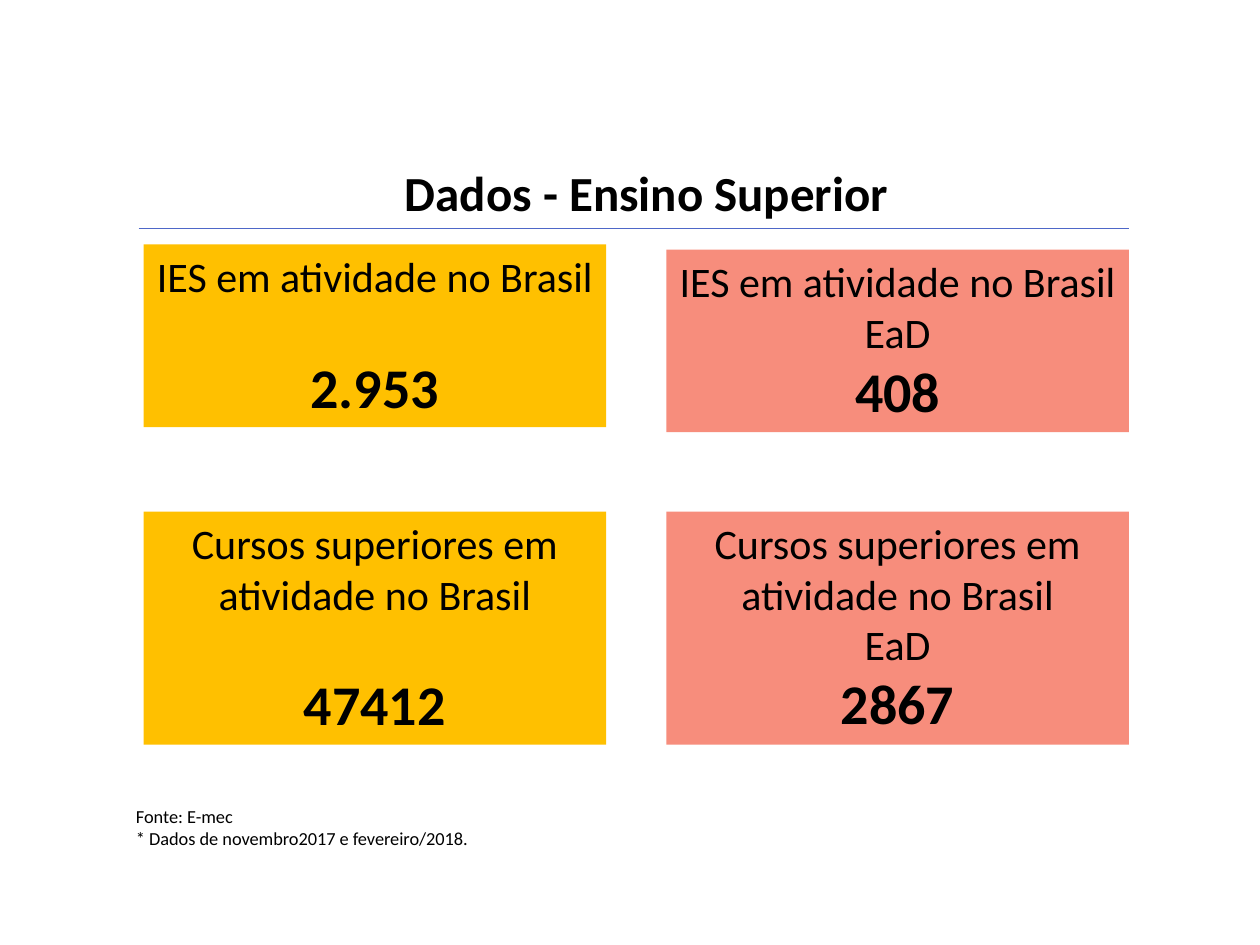
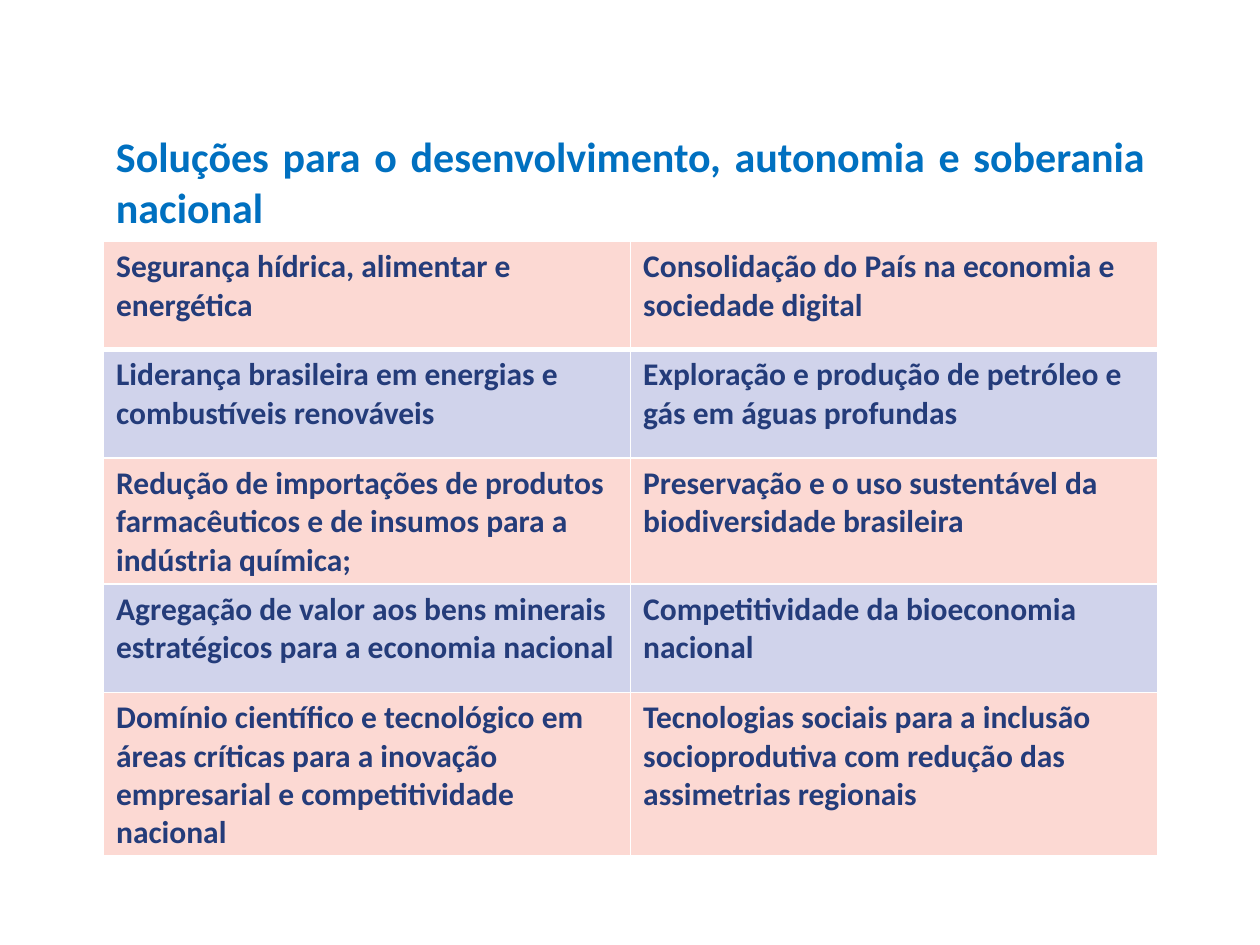
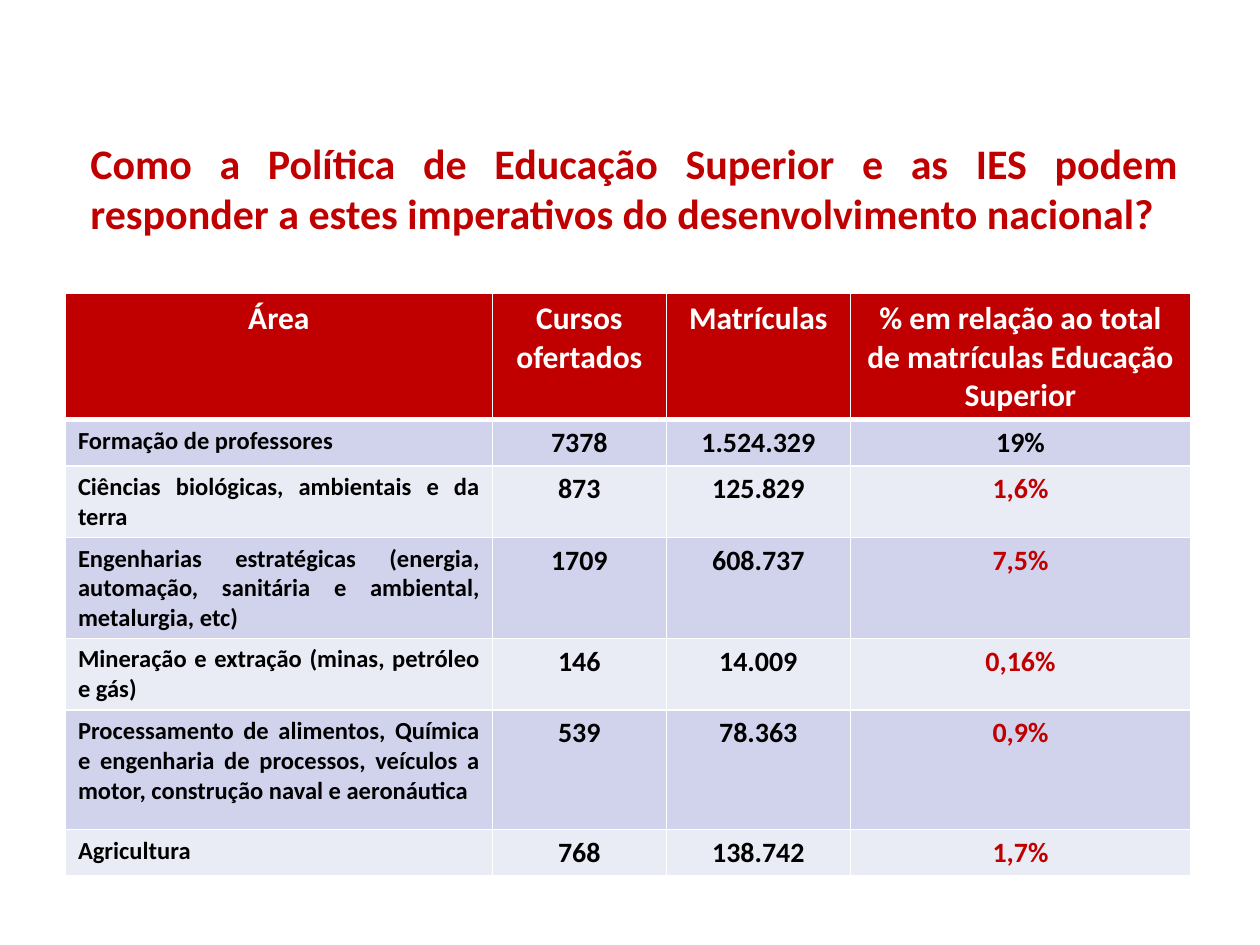
from dataclasses import dataclass

from lxml.etree import SubElement
from pptx import Presentation
from pptx.dml.color import RGBColor
from pptx.enum.shapes import MSO_CONNECTOR as Connector, MSO_SHAPE as ShapeKind
from pptx.enum.text import MSO_ANCHOR as Anchor, PP_ALIGN as Align
from pptx.oxml.ns import qn
from pptx.util import Pt

FONT = "Calibri"
BLACK, WHITE = "000000", "FFFFFF"
GOLD, SALMON = "FFC000", "F78D7C"
BLUE, NAVY, RULE_BLUE = "0070C0", "243C7A", "4E67C8"
RED = "C00000"
PINK, LILAC, PALE = "FCD9D3", "D0D3EB", "E9EBF5"

CARDS = [
    [("IES em atividade no Brasil", "2.953"),
     ("IES em atividade no Brasil EaD", "408")],
    [("Cursos superiores em atividade no Brasil", "47412"),
     ("Cursos superiores em atividade no Brasil\nEaD", "2867")],
]

SOLUTIONS = [
    ("Segurança hídrica, alimentar e energética",
     "Consolidação do País na economia e sociedade digital"),
    ("Liderança brasileira em energias e combustíveis renováveis",
     "Exploração e produção de petróleo e gás em águas profundas"),
    ("Redução de importações de produtos farmacêuticos e de insumos para a indústria química;",
     "Preservação e o uso sustentável da biodiversidade brasileira"),
    ("Agregação de valor aos bens minerais estratégicos para a economia nacional",
     "Competitividade da bioeconomia nacional"),
    ("Domínio científico e tecnológico em áreas críticas para a inovação empresarial e competitividade nacional",
     "Tecnologias sociais para a inclusão socioprodutiva com redução das assimetrias regionais"),
]

AREAS = [
    ("Área", "Cursos ofertados", "Matrículas",
     "% em relação ao total de matrículas Educação Superior"),
    ("Formação de professores", "7378", "1.524.329", "19%"),
    ("Ciências biológicas, ambientais e da terra", "873", "125.829", "1,6%"),
    ("Engenharias estratégicas (energia, automação, sanitária e ambiental, metalurgia, etc)",
     "1709", "608.737", "7,5%"),
    ("Mineração e extração (minas, petróleo e gás)", "146", "14.009", "0,16%"),
    ("Processamento de alimentos, Química e engenharia de processos, veículos a motor, "
     "construção naval e aeronáutica", "539", "78.363", "0,9%"),
    ("Agricultura", "768", "138.742", "1,7%"),
]


@dataclass
class Box:
    left: float
    top: float
    width: float
    height: float

    def lengths(self):
        return Pt(self.left), Pt(self.top), Pt(self.width), Pt(self.height)


@dataclass
class Style:
    size: float
    color: str = BLACK
    bold: bool = False
    align: Align = Align.LEFT


def color(value):
    return RGBColor.from_string(value)


def write(frame, lines):
    for index, (text, style) in enumerate(lines):
        paragraph = frame.paragraphs[0] if index == 0 else frame.add_paragraph()
        paragraph.alignment = style.align
        run = paragraph.add_run()
        run.text = text
        run.font.name = FONT
        run.font.size = Pt(style.size)
        run.font.bold = style.bold
        run.font.color.rgb = color(style.color)


def add_text(slide, box, lines, wrap=True):
    frame = slide.shapes.add_textbox(*box.lengths()).text_frame
    frame.word_wrap = wrap
    write(frame, lines)


def add_rule(slide, left, right, top):
    line = slide.shapes.add_connector(
        Connector.STRAIGHT, Pt(left), Pt(top), Pt(right), Pt(top))
    line.line.color.rgb = color(RULE_BLUE)
    line.line.width = Pt(0.5)
    SubElement(line._element.spPr, qn("a:effectLst"))


def add_card(slide, box, fill, label, number, gap):
    shape = slide.shapes.add_shape(ShapeKind.RECTANGLE, *box.lengths())
    shape.shadow.inherit = False
    shape.fill.solid()
    shape.fill.fore_color.rgb = color(fill)
    shape.line.fill.background()
    frame = shape.text_frame
    frame.word_wrap = True
    frame.vertical_anchor = Anchor.TOP
    label_style = Style(24, align=Align.CENTER)
    lines = [(text, label_style) for text in label.split("\n")]
    write(frame, lines + [(number, Style(32, bold=True, align=Align.CENTER))])
    frame.paragraphs[-1].space_before = Pt(gap)


def add_card_grid(slide, box):
    gap = 34.4
    width = (box.width - gap) / 2
    heights = (104.4, 133.2)
    tops = (box.top, box.top + box.height - heights[1])
    columns = ((GOLD, 29.3), (SALMON, 0))
    for row, cards in enumerate(CARDS):
        for column, (label, number) in enumerate(cards):
            fill, number_gap = columns[column]
            drop = 2.9 if (row, column) == (0, 1) else 0
            card = Box(box.left + column * (width + gap), tops[row] + drop,
                       width, heights[row])
            add_card(slide, card, fill, label, number, number_gap)


def add_borders(cell, row):
    properties = cell._tc.get_or_add_tcPr()
    widths = {"L": 1, "R": 1, "T": 3 if row == 1 else 1, "B": 3 if row == 0 else 1}
    for side, width in widths.items():
        line = SubElement(properties, qn(f"a:ln{side}"), w=str(Pt(width)))
        fill = SubElement(line, qn("a:solidFill"))
        SubElement(fill, qn("a:srgbClr"), val=WHITE)


def add_grid(slide, box, rows, widths, heights, look):
    table = slide.shapes.add_table(len(rows), len(widths), *box.lengths()).table
    table.first_row = table.horz_banding = False
    for column, width in zip(table.columns, widths):
        column.width = Pt(width)
    for row_index, (texts, height) in enumerate(zip(rows, heights)):
        table.rows[row_index].height = Pt(height)
        for column_index, text in enumerate(texts):
            fill, style = look(row_index, column_index)
            cell = table.cell(row_index, column_index)
            add_borders(cell, row_index)
            cell.fill.solid()
            cell.fill.fore_color.rgb = color(fill)
            write(cell.text_frame, [(text, style)])


def solution_look(row, column):
    return (LILAC if row % 2 else PINK), Style(18, NAVY, True)


def area_look(row, column):
    if row == 0:
        return RED, Style(18, WHITE, True, Align.CENTER)
    fill = LILAC if row % 2 else PALE
    if column == 0:
        return fill, Style(14, BLACK, True, Align.JUSTIFY)
    text_color = RED if column == 3 and row > 1 else BLACK
    return fill, Style(16, text_color, True, Align.CENTER)


def build_figures(slide):
    add_text(slide, Box(45.4, 89.3, 648, 41),
             [("Dados - Ensino Superior", Style(28, bold=True, align=Align.CENTER))])
    add_rule(slide, 79.2, 645, 130.7)
    add_card_grid(slide, Box(82.1, 139.7, 563, 285.8))
    add_text(slide, Box(70.6, 456.5, 207.4, 32.4),
             [("Fonte: E-mec", Style(10.5)),
              ("* Dados de novembro2017 e fevereiro/2018.", Style(10.5))], wrap=False)


def build_solutions(slide):
    add_text(slide, Box(59.2, 71.3, 602.4, 65.5),
             [("Soluções para o desenvolvimento, autonomia e soberania nacional",
               Style(24, BLUE, True, Align.JUSTIFY))])
    box = Box(59.2, 137.9, 602.4, 309.5)
    add_grid(slide, box, SOLUTIONS, [box.width / 2] * 2,
             [box.height / len(SOLUTIONS)] * len(SOLUTIONS), solution_look)


def build_areas(slide):
    add_text(slide, Box(44.6, 74.9, 635.8, 94.3),
             [("Como a Política de Educação Superior e as IES podem responder "
               "a estes imperativos do desenvolvimento nacional?",
               Style(24, RED, True, Align.JUSTIFY))])
    add_grid(slide, Box(37.4, 167.8, 643, 309), AREAS, [244, 99.4, 105.2, 194.4],
             [66.2, 23.8, 37.4, 52.6, 37.4, 68.4, 23], area_look)


def main():
    presentation = Presentation()
    presentation.slide_width, presentation.slide_height = Pt(720), Pt(540)
    blank = presentation.slide_layouts[6]
    for build in (build_figures, build_solutions, build_areas):
        build(presentation.slides.add_slide(blank))
    presentation.save("out.pptx")


if __name__ == "__main__":
    main()
